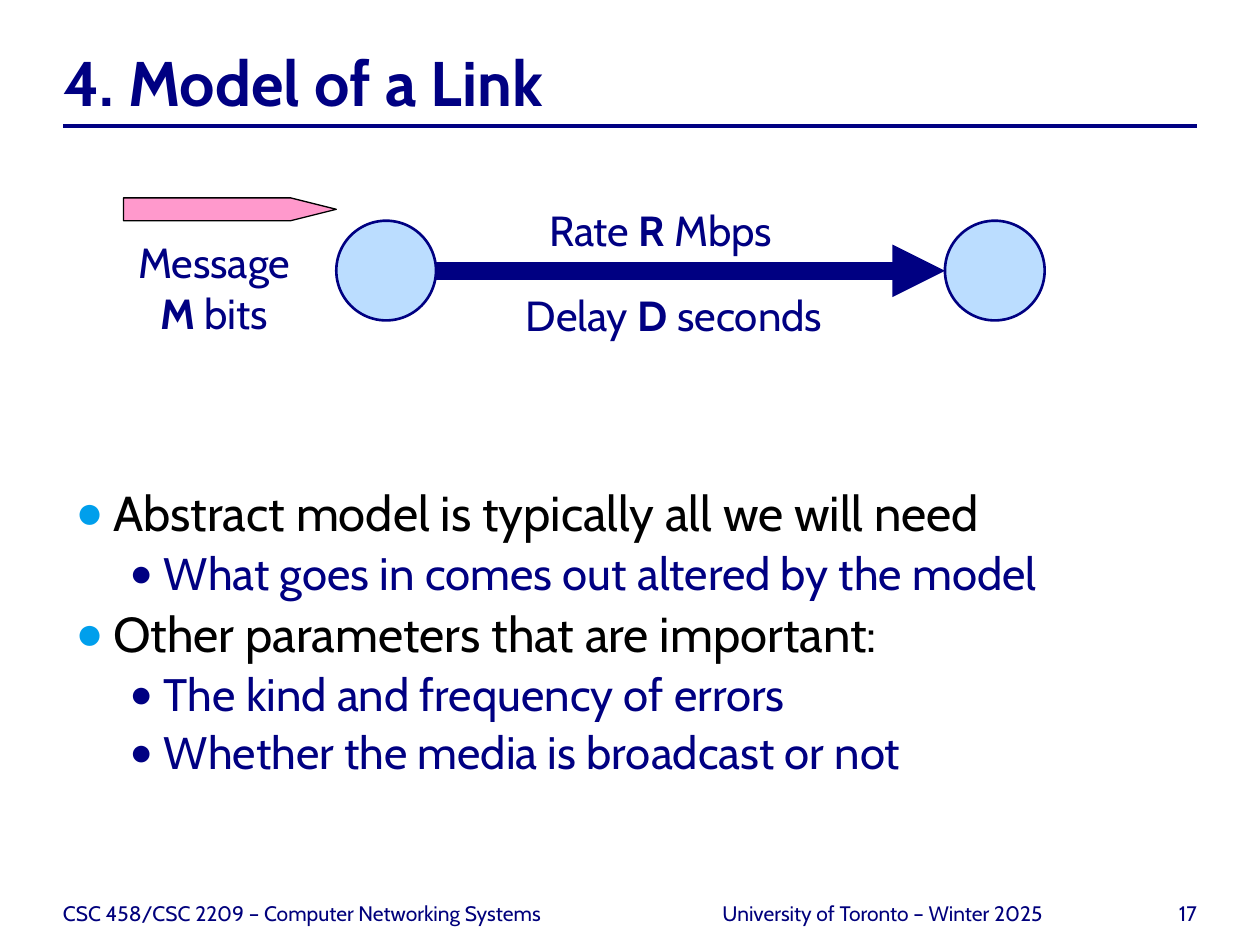
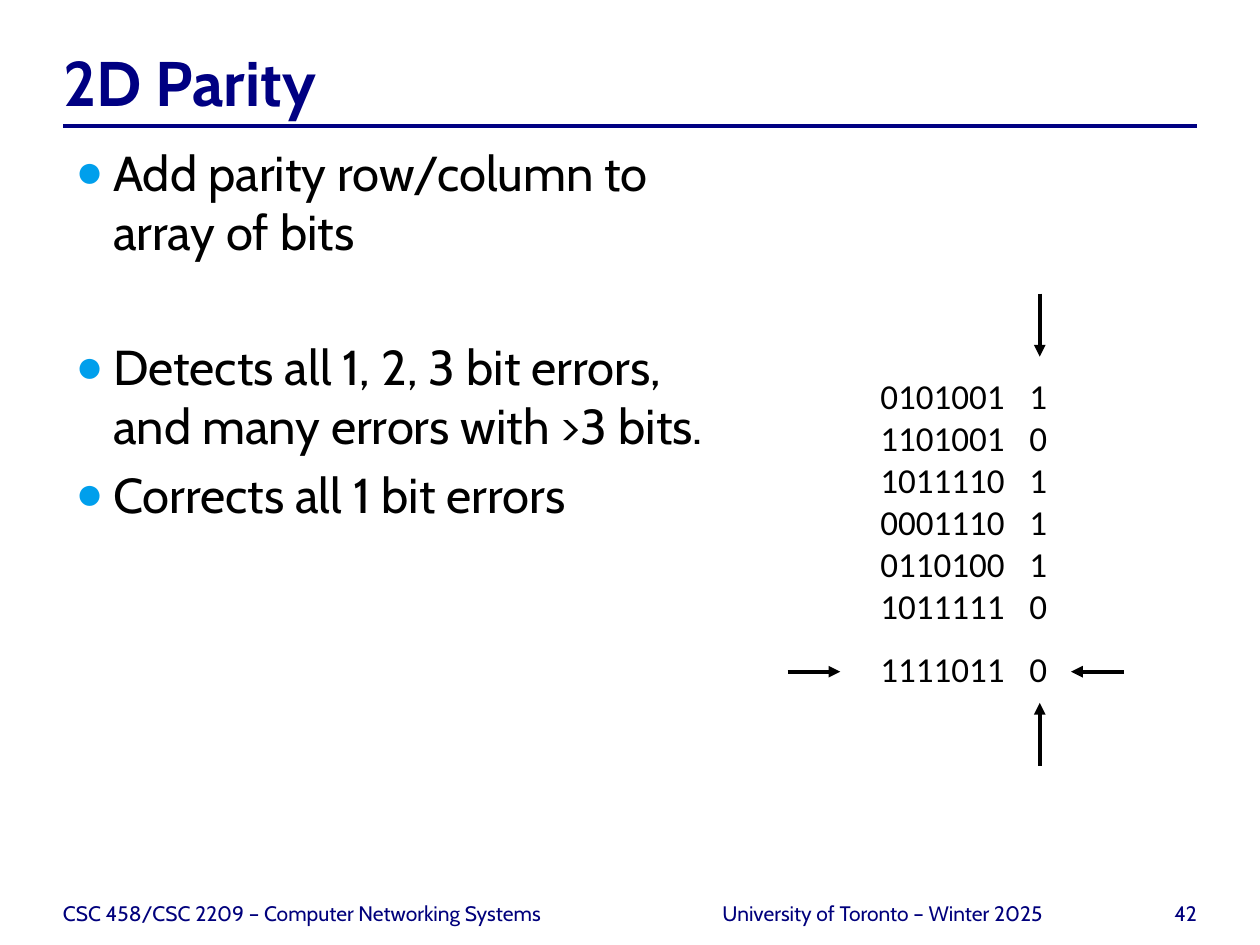
from lxml import etree
from pptx import Presentation
from pptx.dml.color import RGBColor
from pptx.enum.shapes import MSO_CONNECTOR, MSO_SHAPE
from pptx.enum.text import MSO_ANCHOR, MSO_AUTO_SIZE, PP_ALIGN
from pptx.oxml.ns import qn
from pptx.util import Cm, Pt

# Shared look
NAVY = RGBColor(0x00, 0x00, 0x82)
FOOTER_NAVY = RGBColor(0x00, 0x00, 0x7C)
BULLET_BLUE = RGBColor(0x00, 0x9F, 0xEC)
NODE_BLUE = RGBColor(0xBB, 0xDD, 0xFF)
PINK = RGBColor(0xFF, 0x99, 0xCC)
BLACK = RGBColor(0x00, 0x00, 0x00)
FONT = "Cabin"
BITS_FONT = "Calibri"
LEFT, CENTER, RIGHT = PP_ALIGN.LEFT, PP_ALIGN.CENTER, PP_ALIGN.RIGHT
TOP, BOTTOM = MSO_ANCHOR.TOP, MSO_ANCHOR.BOTTOM
NO_FIT = MSO_AUTO_SIZE.NONE
STRAIGHT = MSO_CONNECTOR.STRAIGHT
ELLIPSE, PENTAGON = MSO_SHAPE.OVAL, MSO_SHAPE.PENTAGON

MARGIN, CONTENT_W = 1.27, 22.86
# Per list level: size, text colour, bullet colour, bullet %, margin, hanging (cm)
LEVELS = [
    (28, BLACK, BULLET_BLUE, 95, 0.76, 0.76),
    (26, NAVY, NAVY, 85, 1.78, 0.69),
]


def place(sp, left, top, width, height):
    sp.left, sp.top, sp.width, sp.height = Cm(left), Cm(top), Cm(width), Cm(height)


def add_run(p, text, size, color, bold=False, font=FONT):
    r = p.add_run()
    r.text = text
    r.font.size, r.font.bold, r.font.name = Pt(size), bold, font
    r.font.color.rgb = color


def next_paragraph(tf, index):
    return tf.paragraphs[0] if index == 0 else tf.add_paragraph()


def set_insets(tf, bottom=0):
    tf.margin_left = tf.margin_right = tf.margin_top = 0
    tf.margin_bottom = Cm(bottom)


def add_line(s, start, end, color, width, arrow=False):
    line = s.shapes.add_connector(STRAIGHT, *map(Cm, start + end))
    line.line.color.rgb = color
    line.line.width = Pt(width)
    if arrow:
        ln = line.line._get_or_add_ln()
        etree.SubElement(ln, qn("a:tailEnd"), type="triangle")
    etree.SubElement(line._element.spPr, qn("a:effectLst"))


def add_shape(s, kind, box, fill, outline, width):
    sp = s.shapes.add_shape(kind, *map(Cm, box))
    sp.shadow.inherit = False
    sp.fill.solid()
    sp.fill.fore_color.rgb = fill
    sp.line.color.rgb = outline
    sp.line.width = Pt(width)
    return sp


def add_text(s, box, lines, size, color, align=LEFT, anchor=TOP, font=FONT):
    """Each line is a list of (text, bold) runs."""
    tf = s.shapes.add_textbox(*map(Cm, box)).text_frame
    tf.word_wrap = False
    tf.vertical_anchor = anchor
    for i, runs in enumerate(lines):
        p = next_paragraph(tf, i)
        p.alignment = align
        for text, bold in runs:
            add_run(p, text, size, color, bold, font)
    return tf


def add_footer(s, number):
    cells = [
        (MARGIN, 12.27, "CSC 458/CSC 2209 – Computer Networking Systems", LEFT),
        (13.77, 8.05, "University of Toronto – Winter 2025", CENTER),
        (22.02, 2.11, str(number), RIGHT),
    ]
    for left, width, text, align in cells:
        tf = add_text(s, (left, 17.65, width, 1.02), [[(text, False)]],
                      12, FOOTER_NAVY, align, BOTTOM)
        tf.word_wrap = True
        set_insets(tf)


def new_slide(prs, title, number):
    s = prs.slides.add_slide(prs.slide_layouts[1])
    add_line(s, (MARGIN, 2.54), (MARGIN + CONTENT_W, 2.54), NAVY, 2.25)
    place(s.shapes.title, MARGIN, 0.84, CONTENT_W, 1.7)
    tf = s.shapes.title.text_frame
    tf.auto_size = NO_FIT
    tf.vertical_anchor = BOTTOM
    set_insets(tf, 0.13)
    p = tf.paragraphs[0]
    p.alignment = LEFT
    add_run(p, title, 36, NAVY, True)
    add_footer(s, number)
    return s


def format_bullet(p, color, percent, margin, hanging):
    pPr = p._p.get_or_add_pPr()
    pPr.set("marL", str(Cm(margin)))
    pPr.set("indent", str(-Cm(hanging)))
    bu_color = etree.SubElement(pPr, qn("a:buClr"))
    etree.SubElement(bu_color, qn("a:srgbClr"), val=str(color))
    etree.SubElement(pPr, qn("a:buSzPct"), val=str(percent * 1000))
    etree.SubElement(pPr, qn("a:buChar"), char="●")


def fill_body(s, box, items, line_spacing=1.0):
    """Items are (level, text, space before in points or None)."""
    body = s.placeholders[1]
    place(body, *box)
    tf = body.text_frame
    tf.auto_size = NO_FIT
    for i, (level, text, gap) in enumerate(items):
        size, color, *bullet = LEVELS[level]
        p = next_paragraph(tf, i)
        p.level = level
        p.line_spacing = line_spacing
        if gap:
            p.space_before = Pt(gap)
        format_bullet(p, *bullet)
        add_run(p, text, size, color)


def build_link_slide(prs):
    s = new_slide(prs, "4. Model of a Link", 17)
    fill_body(s, (MARGIN, 9.73, CONTENT_W, 7.19), [
        (0, "Abstract model is typically all we will need", None),
        (1, "What goes in comes out altered by the model", None),
        (0, "Other parameters that are important:", None),
        (1, "The kind and frequency of errors", None),
        (1, "Whether the media is broadcast or not", None),
    ], 0.9)

    # Link between two nodes, with the message about to enter
    add_line(s, (8.69, 5.46), (19.05, 5.46), NAVY, 10, arrow=True)
    for left in (6.78, 19.05):
        add_shape(s, ELLIPSE, (left, 4.45, 2.01, 2.01), NODE_BLUE, NAVY, 1.5)
    message = add_shape(s, PENTAGON, (2.49, 3.99, 4.29, 0.46), PINK, BLACK, 0.75)
    message.adjustments[0] = 2

    # Labels
    labels = [
        ((2.49, 4.65, 3.66, 2.31),
         [[("Message", False)], [("M", True), (" bits", False)]]),
        ((10.74, 3.99, 5.16, 1.27),
         [[("Rate ", False), ("R", True), (" Mbps", False)]]),
        ((10.21, 5.72, 6.76, 1.27),
         [[("Delay ", False), ("D", True), (" seconds", False)]]),
    ]
    for box, lines in labels:
        add_text(s, box, lines, 24, NAVY, CENTER)


def build_parity_slide(prs):
    s = new_slide(prs, "2D Parity", 42)
    fill_body(s, (MARGIN, 2.74, 13.77, 14.81), [
        (0, "Add parity row/column to array of bits", None),
        (0, "Detects all 1, 2, 3 bit errors, and many errors with >3 bits.", 44),
        (0, "Corrects all 1 bit errors", None),
    ])

    # Bit rows with the parity column on a tab stop, parity row set apart
    rows = [("0101001", 1), ("1101001", 0), ("1011110", 1), ("0001110", 1),
            ("0110100", 1), ("1011111", 0), ("1111011", 0)]
    lines = [[(f"{bits}\t{parity}", False)] for bits, parity in rows]
    tf = add_text(s, (17.5, 7.42, 3.89, 6.68), lines, 20, BLACK, font=BITS_FONT)
    tf.paragraphs[-1].space_before = Pt(12)
    for p in tf.paragraphs:
        tabs = etree.SubElement(p._p.get_or_add_pPr(), qn("a:tabLst"))
        etree.SubElement(tabs, qn("a:tab"), pos=str(Cm(3)), algn="l")

    # Arrows pointing at the parity column and the parity row
    column_x, row_y = 20.96, 13.54
    arrows = [
        ((column_x, 15.44), (column_x, 14.17)),
        ((22.66, row_y), (21.59, row_y)),
        ((15.88, row_y), (16.94, row_y)),
        ((column_x, 5.92), (column_x, 7.19)),
    ]
    for start, end in arrows:
        add_line(s, start, end, BLACK, 2.25, arrow=True)


def main():
    prs = Presentation()
    prs.slide_width, prs.slide_height = Cm(25.4), Cm(19.05)
    build_link_slide(prs)
    build_parity_slide(prs)
    prs.save("out.pptx")


if __name__ == "__main__":
    main()
